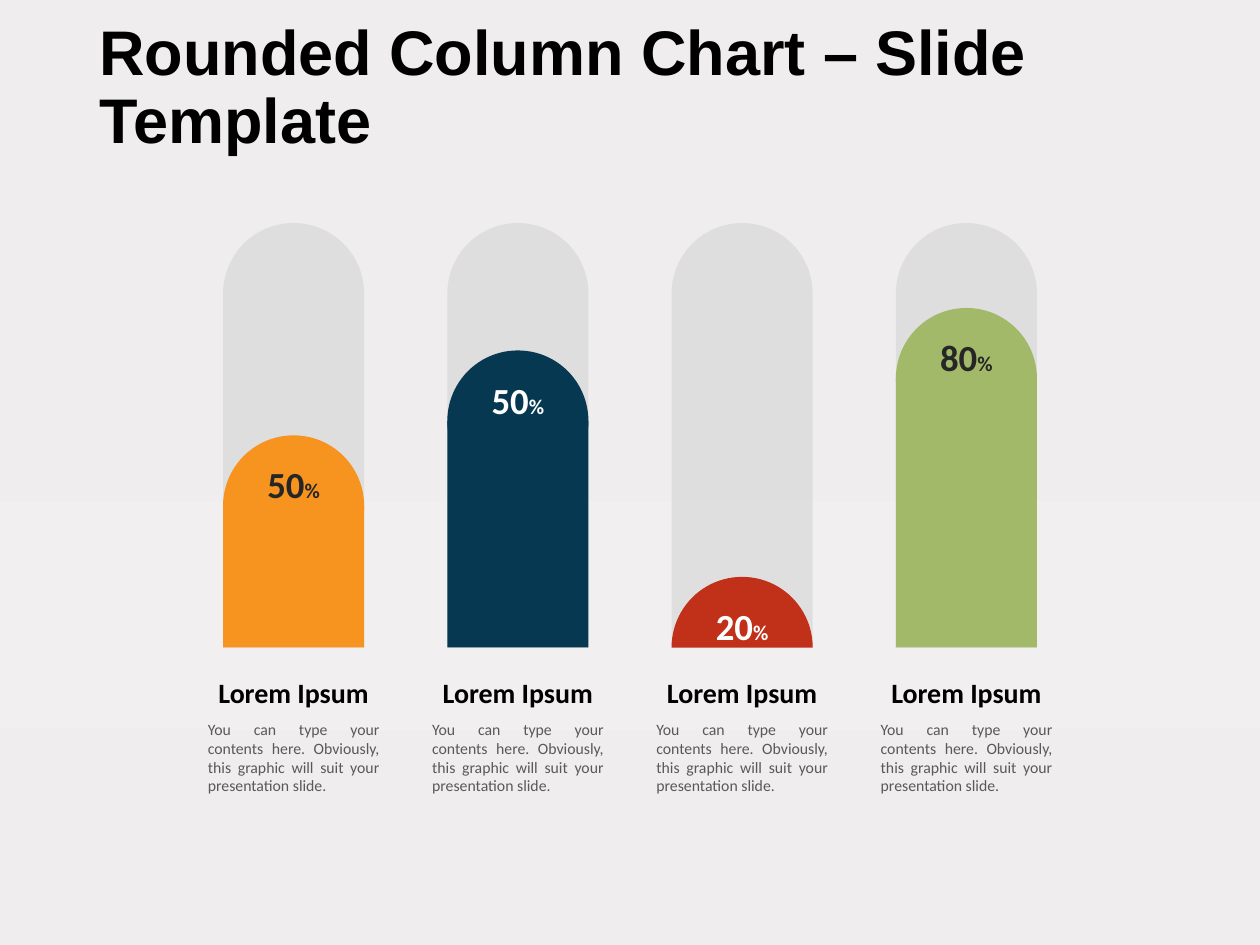
from collections import namedtuple
from dataclasses import dataclass

from lxml import etree
from pptx import Presentation
from pptx.dml.color import RGBColor
from pptx.enum import shapes, text
from pptx.oxml.ns import qn
from pptx.util import Inches, Pt

Box = namedtuple("Box", "left top width height")
Column = namedtuple("Column", "number level fill ink")


@dataclass(frozen=True)
class Theme:
    title_font: str = "Arial"
    body_font: str = "Calibri"
    black: str = "000000"
    body: str = "595959"
    track: str = "D9D9D9"
    track_alpha: int = 70
    mask: str = "F1EFF0"
    background: tuple = ((0, "EFEDEE"), (53, "F1EFF0"), (77, "EFEDEE"), (100, "EFEBEC"))
    title_size: int = 36
    number_size: int = 21
    percent_size: int = 12
    heading_size: int = 16
    body_size: int = 9


THEME = Theme()
HEADING = "Lorem Ipsum"
BODY = "You can type your contents here. Obviously, this graphic will suit your presentation slide."
COLUMNS = [
    Column("50", 0.5, "F7931F", "262626"),
    Column("50", 0.7, "063951", "FFFFFF"),
    Column("20", 1 / 6, "C13018", "FFFFFF"),  # only the upper half of the cap shows
    Column("80", 0.8, "A2B969", "262626"),
]
CHART = Box(1.77, 1.77, 6.46, 3.37)
COLUMN_WIDTH = 1.12
STEP = (CHART.width - COLUMN_WIDTH) / (len(COLUMNS) - 1)
CAPTION_WIDTH = 1.36


def style(span, size, color, font=THEME.body_font, bold=False):
    span.font.size, span.font.name, span.font.bold = Pt(size), font, bold
    span.font.color.rgb = RGBColor.from_string(color)


def add_block(page, kind, box, color):
    """Add a filled preset shape without outline or shadow."""
    block = page.shapes.add_shape(kind, *map(Inches, box))
    block.shadow.inherit = False
    block.fill.solid()
    block.fill.fore_color.rgb = RGBColor.from_string(color)
    block.line.fill.background()
    return block


def add_text(page, box, words, align, anchor=text.MSO_ANCHOR.TOP, inset=0, **look):
    label = page.shapes.add_textbox(*map(Inches, box))
    frame = label.text_frame
    frame.word_wrap = True
    frame.vertical_anchor = anchor
    frame.margin_left, frame.margin_right = Inches(inset), 0
    frame.text = words
    para = frame.paragraphs[0]
    para.alignment = align
    style(para.runs[0], **look)
    return label


def paint_background(page):
    fill = page.background.fill
    fill.gradient()
    fill.gradient_angle = 270
    stops = page.element.find(".//" + qn("a:gsLst"))
    for stop in list(stops):
        stops.remove(stop)
    for percent, color in THEME.background:
        stop = etree.SubElement(stops, qn("a:gs"), pos=str(percent * 1000))
        etree.SubElement(stop, qn("a:srgbClr"), val=color)


def add_title(page, box):
    title = add_text(page, box, "Rounded Column Chart – Slide Template", text.PP_ALIGN.LEFT,
                     inset=0.1, size=THEME.title_size, color=THEME.black,
                     font=THEME.title_font, bold=True)
    title.text_frame.paragraphs[0].line_spacing = 0.9


def add_column(page, box, column):
    """Draw the pale track, the filled part and its round cap with the value."""
    kinds = shapes.MSO_SHAPE
    track = add_block(page, kinds.ROUND_2_SAME_RECTANGLE, box, THEME.track)
    track.adjustments[0] = 0.5
    color = track.element.spPr.find(".//" + qn("a:srgbClr"))
    etree.SubElement(color, qn("a:alpha"), val=str(THEME.track_alpha * 1000))

    radius = box.width / 2
    bottom = box.top + box.height
    cap_top = bottom - box.height * column.level
    body_height = bottom - cap_top - radius
    if body_height > 0.01:
        body = Box(box.left, cap_top + radius, box.width, body_height)
        add_block(page, kinds.RECTANGLE, body, column.fill)
    cap = add_block(page, kinds.OVAL, Box(box.left, cap_top, box.width, box.width), column.fill)
    cap.text_frame.vertical_anchor = text.MSO_ANCHOR.TOP
    para = cap.text_frame.paragraphs[0]
    para.alignment = text.PP_ALIGN.CENTER
    for words, size in ((column.number, THEME.number_size), ("%", THEME.percent_size)):
        span = para.add_run()
        span.text = words
        style(span, size, column.ink, bold=True)


def add_caption(page, box):
    heading_height, body_offset = 0.37, 0.35
    heading = add_text(page, box._replace(height=heading_height), HEADING, text.PP_ALIGN.CENTER,
                       text.MSO_ANCHOR.BOTTOM, size=THEME.heading_size,
                       color=THEME.black, bold=True)
    body_box = box._replace(top=box.top + body_offset, height=box.height - body_offset)
    body = add_text(page, body_box, BODY, text.PP_ALIGN.JUSTIFY,
                    size=THEME.body_size, color=THEME.body)
    for label in (heading, body):
        label.text_frame.auto_size = text.MSO_AUTO_SIZE.SHAPE_TO_FIT_TEXT


def main():
    deck = Presentation()
    deck.slide_width, deck.slide_height = Inches(10), Inches(7.5)
    page = deck.slides.add_slide(deck.slide_layouts[6])
    paint_background(page)
    add_title(page, Box(0.69, 0.12, 9.31, 0.81))

    lefts = [CHART.left + STEP * index for index in range(len(COLUMNS))]
    for left, column in zip(lefts, COLUMNS):
        add_column(page, CHART._replace(left=left, width=COLUMN_WIDTH), column)
    # The mask hides the part of a low cap that falls below the base line.
    base = CHART.top + CHART.height
    add_block(page, shapes.MSO_SHAPE.RECTANGLE,
              CHART._replace(top=base, height=0.66), THEME.mask)
    for left in lefts:
        caption_left = left - (CAPTION_WIDTH - COLUMN_WIDTH) / 2
        add_caption(page, Box(caption_left, 5.31, CAPTION_WIDTH, 1.06))
    deck.save("out.pptx")


if __name__ == "__main__":
    main()
